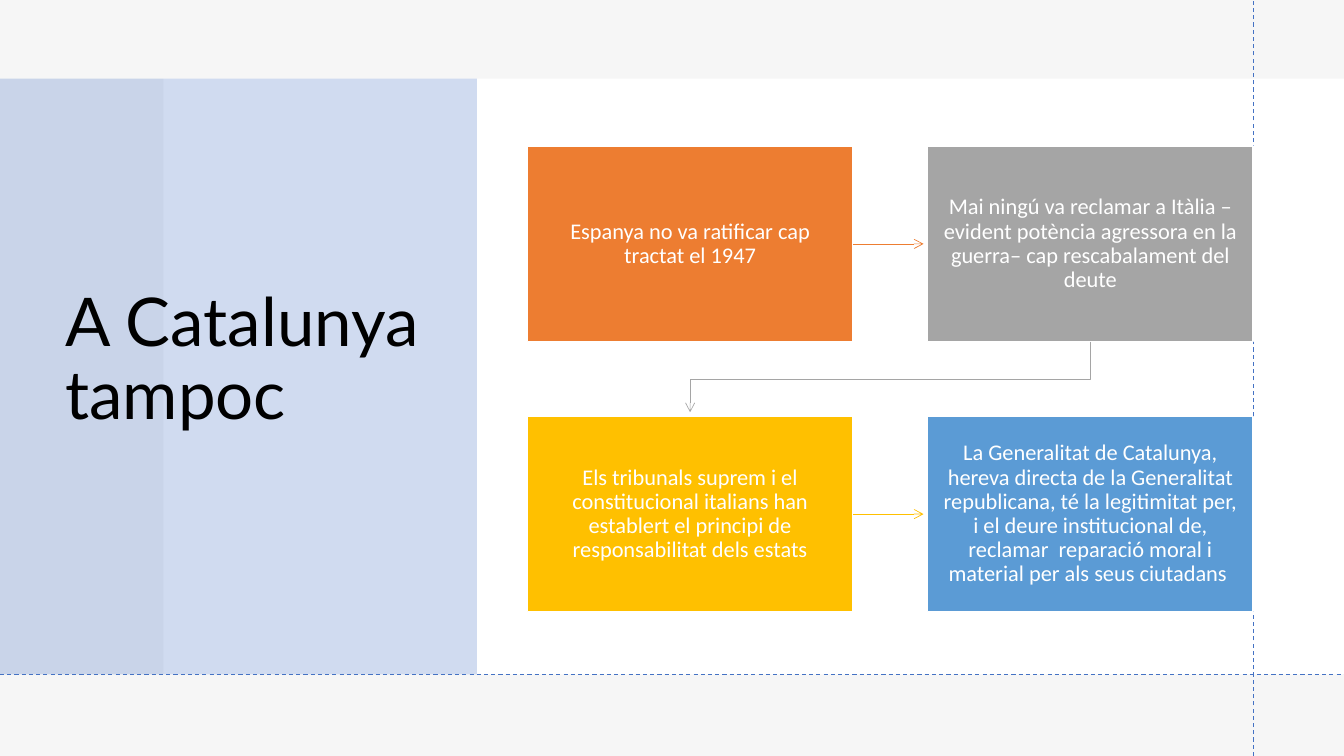
from dataclasses import dataclass
from typing import Any, Optional

from lxml.etree import SubElement
from pptx import Presentation
from pptx.dml.color import RGBColor
from pptx.enum.dml import MSO_LINE
from pptx.enum.shapes import MSO_CONNECTOR, MSO_SHAPE
from pptx.enum.text import MSO_ANCHOR, MSO_AUTO_SIZE, PP_ALIGN
from pptx.oxml.ns import qn
from pptx.util import Inches, Pt


@dataclass(frozen=True)
class Theme:
    white: str = "FFFFFF"
    black: str = "000000"
    grey: str = "E7E6E6"
    blue: str = "4472C4"
    title_font: str = "Lato"
    body_font: str = "Calibri"
    title_size: int = 48
    body_size: int = 16
    guide_width: float = 0.75
    arrow_width: float = 0.5
    border_width: float = 1


@dataclass(frozen=True)
class Panel:
    left: float
    top: float
    width: float
    height: float
    color: str
    opacity: Optional[int] = None


@dataclass(frozen=True)
class Step:
    text: str
    color: str


THEME = Theme()
SLIDE_WIDTH, SLIDE_HEIGHT = 13.33, 7.5
BAND_TOP, BAND_BOTTOM = 0.78, 6.69
GRID_LEFT, GRID_TOP = 5.23, 1.45
BOX_WIDTH, BOX_HEIGHT = 3.23, 1.94
COLUMN_STEP, ROW_STEP = 3.97, 2.68
ARROW_GAP = 0.04
COLUMNS = 2
GRID_RIGHT = GRID_LEFT + COLUMN_STEP + BOX_WIDTH

PANELS = [
    Panel(0, 0, SLIDE_WIDTH, SLIDE_HEIGHT, THEME.white),
    Panel(0, 0, SLIDE_WIDTH, SLIDE_HEIGHT, THEME.grey, 35),
    Panel(1.62, BAND_TOP, SLIDE_WIDTH - 1.62, BAND_BOTTOM - BAND_TOP, THEME.white),
    Panel(0, BAND_TOP, 4.73, BAND_BOTTOM - BAND_TOP, THEME.blue, 25),
]
GUIDES = [
    (GRID_RIGHT, SLIDE_HEIGHT, GRID_RIGHT, 0),
    (0, BAND_BOTTOM, SLIDE_WIDTH, BAND_BOTTOM),
]
STEPS = [
    Step("Espanya no va ratificar cap tractat el 1947", "ED7D31"),
    Step("Mai ningú va reclamar a Itàlia – evident potència agressora en la guerra– "
         "cap rescabalament del deute", "A5A5A5"),
    Step("Els tribunals suprem i el constitucional italians han establert el principi de "
         "responsabilitat dels estats", "FFC000"),
    Step("La Generalitat de Catalunya, hereva directa de la Generalitat republicana, té la "
         "legitimitat per, i el deure institucional de, reclamar  reparació moral i material "
         "per als seus ciutadans ", "5B9BD5"),
]


def apply_format(target: Any, values: dict[str, Any]) -> None:
    for name, value in values.items():
        setattr(target, name, value)


def write_text(shape: Any, text: str, font: dict[str, Any], color: str,
               alignment: PP_ALIGN, frame: dict[str, Any]) -> None:
    apply_format(shape.text_frame, {
        "word_wrap": True, "auto_size": MSO_AUTO_SIZE.NONE,
        "vertical_anchor": MSO_ANCHOR.MIDDLE, **frame,
    })
    paragraph = shape.text_frame.paragraphs[0]
    apply_format(paragraph, {"alignment": alignment, "line_spacing": 0.9})
    run = paragraph.add_run()
    run.text = text
    apply_format(run.font, font)
    run.font.color.rgb = RGBColor.from_string(color)


def add_panel(slide: Any, panel: Panel) -> Any:
    lengths = (panel.left, panel.top, panel.width, panel.height)
    shape = slide.shapes.add_shape(MSO_SHAPE.RECTANGLE, *map(Inches, lengths))
    shape.shadow.inherit = False
    shape.fill.solid()
    shape.fill.fore_color.rgb = RGBColor.from_string(panel.color)
    shape.line.fill.background()
    if panel.opacity is not None:
        color = shape.element.spPr.find(qn("a:solidFill"))[0]
        SubElement(color, qn("a:alpha"), val=str(panel.opacity * 1000))
    return shape


def style_line(shape: Any, color: str, width: float) -> None:
    shape.line.color.rgb = RGBColor.from_string(color)
    shape.line.width = Pt(width)


def add_line(slide: Any, ends: tuple, color: str, width: float) -> Any:
    line = slide.shapes.add_connector(MSO_CONNECTOR.STRAIGHT, *map(Inches, ends))
    style_line(line, color, width)
    SubElement(line.element.spPr, qn("a:effectLst"))
    return line


def add_arrowhead(shape: Any) -> None:
    SubElement(shape.line._get_or_add_ln(), qn("a:tailEnd"), type="arrow")


def box_corner(index: int) -> tuple[float, float]:
    row, column = divmod(index, COLUMNS)
    return GRID_LEFT + column * COLUMN_STEP, GRID_TOP + row * ROW_STEP


def add_step(slide: Any, index: int, step: Step) -> Any:
    box = add_panel(slide, Panel(*box_corner(index), BOX_WIDTH, BOX_HEIGHT, step.color))
    style_line(box, THEME.white, THEME.border_width)
    write_text(
        box, step.text, {"name": THEME.body_font, "size": Pt(THEME.body_size)},
        THEME.white, PP_ALIGN.CENTER,
        {"margin_left": Inches(0.16), "margin_right": Inches(0.16),
         "margin_top": Inches(0.17), "margin_bottom": Inches(0.17)},
    )
    return box


def add_row_arrow(slide: Any, index: int, box: Any) -> None:
    """Point from a box to its right-hand neighbour."""
    left, top = box_corner(index)
    middle = top + BOX_HEIGHT / 2
    ends = (left + BOX_WIDTH, middle, left + COLUMN_STEP - ARROW_GAP, middle)
    arrow = add_line(slide, ends, STEPS[index].color, THEME.arrow_width)
    arrow.begin_connect(box, 3)
    add_arrowhead(arrow)


def add_return_arrow(slide: Any, index: int) -> None:
    """Bend from the last box of a row down to the first box of the next."""
    left, top = box_corner(index)
    next_left, next_top = box_corner(index + 1)
    start, end = left + BOX_WIDTH / 2, next_left + BOX_WIDTH / 2
    bottom = top + BOX_HEIGHT
    bend = (bottom + next_top) / 2
    builder = slide.shapes.build_freeform(Inches(start), Inches(bottom))
    corners = [(start, bend), (end, bend), (end, next_top - ARROW_GAP)]
    builder.add_line_segments([(Inches(x), Inches(y)) for x, y in corners], close=False)
    arrow = builder.convert_to_shape()
    arrow.shadow.inherit = False
    arrow.fill.background()
    style_line(arrow, STEPS[index].color, THEME.arrow_width)
    add_arrowhead(arrow)


def place_title(slide: Any, text: str) -> None:
    title = slide.shapes.title
    slide.shapes.element.append(title.element)
    apply_format(title, {"left": Inches(0.55), "top": Inches(0.74),
                         "width": Inches(3.95), "height": Inches(5.69)})
    write_text(title, text, {"name": THEME.title_font, "size": Pt(THEME.title_size)},
               THEME.black, PP_ALIGN.LEFT, {})


def main() -> None:
    presentation = Presentation()
    apply_format(presentation, {"slide_width": Inches(SLIDE_WIDTH),
                                "slide_height": Inches(SLIDE_HEIGHT)})
    slide = presentation.slides.add_slide(presentation.slide_layouts[5])
    for panel in PANELS:
        add_panel(slide, panel)
    place_title(slide, "A Catalunya tampoc")
    for ends in GUIDES:
        guide = add_line(slide, ends, THEME.blue, THEME.guide_width)
        guide.line.dash_style = MSO_LINE.DASH
    boxes = [add_step(slide, index, step) for index, step in enumerate(STEPS)]
    for index, box in enumerate(boxes[:-1]):
        if index % COLUMNS < COLUMNS - 1:
            add_row_arrow(slide, index, box)
        else:
            add_return_arrow(slide, index)
    presentation.save("out.pptx")


if __name__ == "__main__":
    main()
